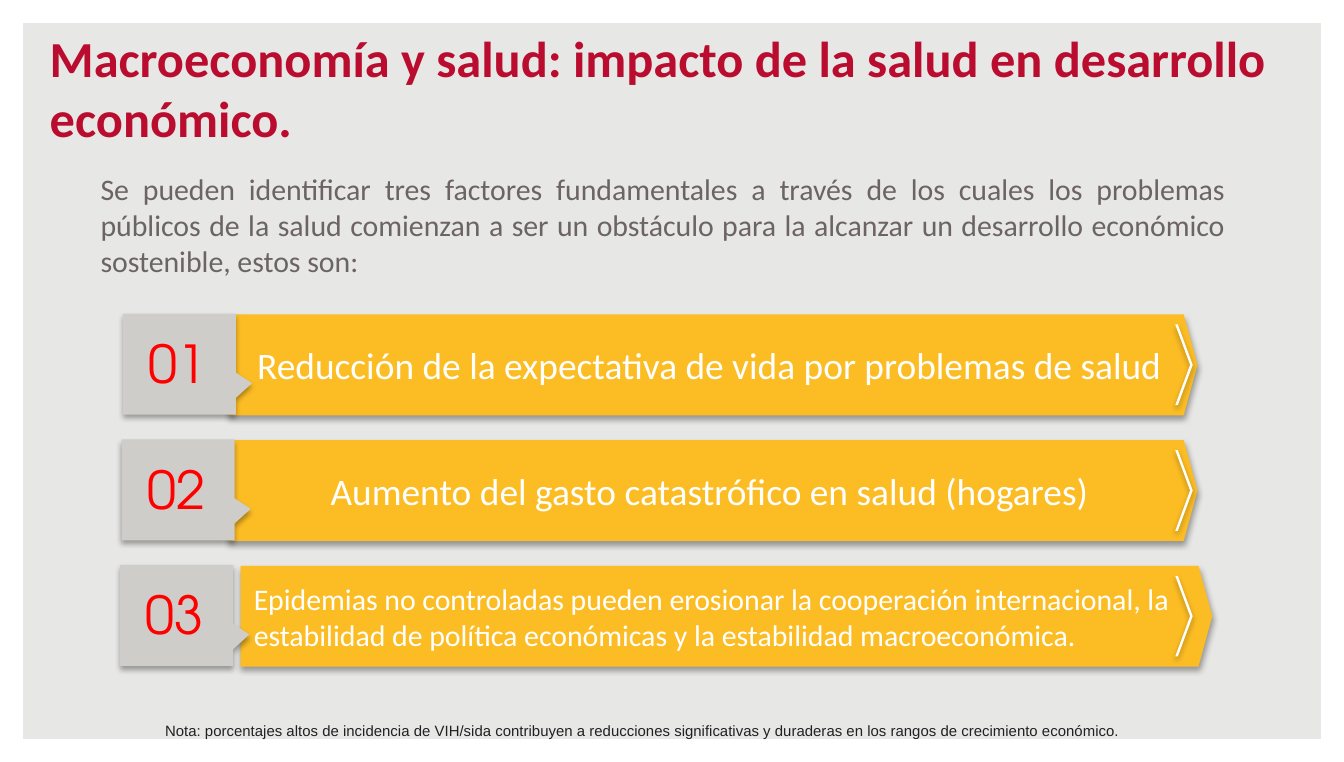
from lxml import etree
from pptx import Presentation
from pptx.dml.color import RGBColor
from pptx.enum import shapes, text
from pptx.oxml import ns
from pptx.util import Inches, Pt

COLORS = {
    "background": "E7E7E5", "white": "FFFFFF", "title": "BA0C2F",
    "body": "6C6463", "arrow": "FCBD24", "tab": "CFCDC9",
    "number": "FF0000", "note": "202124", "shadow": "000000",
}
PRESET = shapes.MSO_SHAPE
ALIGN = text.PP_ALIGN
ANCHOR = text.MSO_ANCHOR

deck = Presentation()
deck.slide_width, deck.slide_height = Inches(10), Inches(5.67)
CELL = deck.slide_width / 100
page = deck.slides.add_slide(deck.slide_layouts[5])
page.background.fill.solid()
page.background.fill.fore_color.rgb = RGBColor.from_string(COLORS["background"])


def draw(preset, cells, color, adjustments, shadow=True):
    shape = page.shapes.add_shape(preset, *(round(n * CELL) for n in cells))
    for index, value in enumerate(adjustments):
        shape.adjustments[index] = value
    shape.fill.solid()
    shape.fill.fore_color.rgb = RGBColor.from_string(COLORS[color])
    shape.line.fill.background()
    shape.shadow.inherit = False
    if shadow:
        effects = shape._element.spPr.find(ns.qn("a:effectLst"))
        outer = etree.SubElement(effects, ns.qn("a:outerShdw"), blurRad=str(Pt(3.1)),
                                 dist=str(Pt(1.8)), dir="5400000", rotWithShape="0")
        tint = etree.SubElement(outer, ns.qn("a:srgbClr"), val=COLORS["shadow"])
        etree.SubElement(tint, ns.qn("a:alpha"), val="35000")
    return shape


def write(box, words, color, size, font="Calibri", bold=False,
          anchor=ANCHOR.TOP, fit=text.MSO_AUTO_SIZE.NONE, **paragraph_format):
    frame = box.text_frame
    for name, value in {"word_wrap": True, "auto_size": fit, "vertical_anchor": anchor}.items():
        setattr(frame, name, value)
    para = frame.paragraphs[0]
    for name, value in {"alignment": ALIGN.LEFT, **paragraph_format}.items():
        setattr(para, name, value)
    span = para.add_run()
    span.text = words
    for name, value in {"name": font, "size": Pt(size), "bold": bold}.items():
        setattr(span.font, name, value)
    span.font.color.rgb = RGBColor.from_string(COLORS[color])


border = draw(PRESET.FRAME, (0, 0, 100, 56.7), "white", [0.03], shadow=False)
page.shapes._spTree.insert(2, border._element)

title = page.shapes.title
for name, value in {"left": 2.7, "top": 2.1, "width": 95.4, "height": 9.4}.items():
    setattr(title, name, round(value * CELL))
write(title, "Macroeconomía y salud: impacto de la salud en desarrollo económico.",
      "title", 27, bold=True, anchor=ANCHOR.BOTTOM)

intro = page.shapes.add_textbox(*(round(n * CELL) for n in (6.5, 12.2, 85.7, 10.5)))
write(intro, "Se pueden identificar tres factores fundamentales a través de los cuales "
      "los problemas públicos de la salud comienzan a ser un obstáculo para la alcanzar "
      "un desarrollo económico sostenible, estos son:", "body", 16,
      alignment=ALIGN.JUSTIFY, space_before=Pt(18), space_after=Pt(8))

factors = [
    ("Reducción de la expectativa de vida por problemas de salud", 17, 72.1, 20, ALIGN.CENTER),
    ("Aumento del gasto catastrófico en salud (hogares)", 17, 72.1, 20, ALIGN.CENTER),
    ("Epidemias no controladas pueden erosionar la cooperación internacional, la "
     "estabilidad de política económicas y la estabilidad macroeconómica.",
     17.9, 72.3, 16, ALIGN.LEFT),
]
for index, (words, left, width, size, alignment) in enumerate(factors):
    top = 23.4 + 9.35 * index
    shift = 0.1 * index
    arrow = draw(PRESET.PENTAGON, (left, top, width, 7.5), "arrow", [0.137])
    write(arrow, words, "white", size, anchor=ANCHOR.MIDDLE, alignment=alignment)
    draw(PRESET.CHEVRON, (87.45, top + 0.75, 1.3, 6), "white", [0.853])
    tab = draw(PRESET.RECTANGULAR_CALLOUT, (9.6 - shift, top - 0.5, 7.5, 8.4),
               "tab", [-0.188, 0.644])
    tab.rotation = 270
    number = page.shapes.add_textbox(
        *(round(n * CELL) for n in (9.5 - shift, top + 0.75, 7.4, 5.7)))
    write(number, f"{index + 1:02}", "number", 28, "TeX Gyre Adventor",
          fit=text.MSO_AUTO_SIZE.SHAPE_TO_FIT_TEXT, alignment=ALIGN.CENTER)

note = page.shapes.add_textbox(*(round(n * CELL) for n in (11.3, 53.2, 85.4, 2.4)))
write(note, "Nota: porcentajes altos de incidencia de VIH/sida contribuyen a reducciones "
      "significativas y duraderas en los rangos de crecimiento económico.",
      "note", 8, "Arial", fit=text.MSO_AUTO_SIZE.SHAPE_TO_FIT_TEXT)

deck.save("out.pptx")
